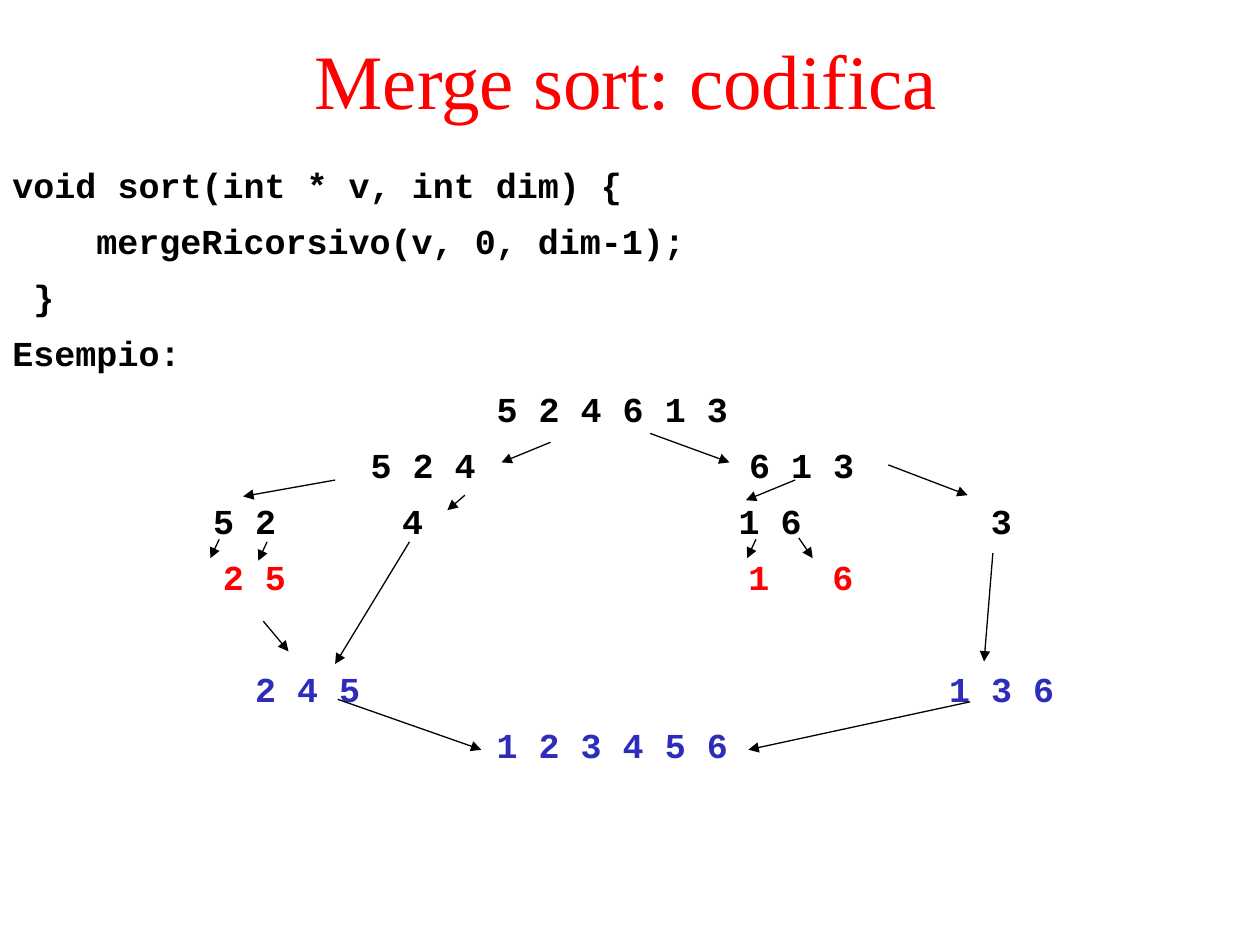
from lxml import etree
from pptx import Presentation
from pptx import util as u
from pptx.dml.color import RGBColor
from pptx.enum import shapes, text
from pptx.oxml.ns import qn

BLACK, RED, BLUE = "000000", "FF0000", "2D2DB9"
CENTRED = None

# Each line: colour, space before in points, (character column, words) pieces.
LINES = [
    (BLACK, 0, [(0, "void sort(int * v, int dim) {")]),
    (BLACK, 8, [(4, "mergeRicorsivo(v, 0, dim-1);")]),
    (BLACK, 8, [(1, "}")]),
    (BLACK, 8, [(0, "Esempio:")]),
    (BLACK, 8, [(CENTRED, "5 2 4 6 1 3")]),
    (BLACK, 8, [(17.06, "5 2 4"), (35.08, "6 1 3")]),
    (BLACK, 8, [(9.56, "5 2"), (18.56, "4"), (34.58, "1 6"), (46.6, "3")]),
    (RED, 8, [(10.02, "2 5"), (35.05, "1"), (39.05, "6")]),
    (BLUE, 40, [(11.56, "2 4 5"), (44.6, "1 3 6")]),
    (BLUE, 8, [(CENTRED, "1 2 3 4 5 6")]),
]

# Start column, start row, end column, end row.
SPLIT_ARROWS = [
    (43.7, 35.1, 39.8, 36.7), (51.6, 34.4, 57.9, 36.7),
    (70.5, 36.9, 76.8, 39.3), (63.1, 38.1, 59.2, 39.7),
    (26.6, 38.1, 19.3, 39.4), (36.9, 39.3, 35.5, 40.5),
    (17.4, 42.8, 16.7, 44.3), (21.2, 43, 20.5, 44.5),
    (60, 42.8, 59.3, 44.3), (63.4, 42.7, 64.5, 44.3),
]
MERGE_ARROWS = [
    (32.5, 43, 26.6, 52.7), (20.9, 49.3, 22.9, 51.7),
    (78.8, 43.9, 78.1, 52.5), (26.8, 55.5, 38.2, 59.5),
    (77, 55.7, 59.4, 59.5),
]


def colour(value):
    return RGBColor.from_string(value)


class Board:
    """Draws on one slide, laid out as 100 columns by 75 rows."""

    title_font, code_font = "Times New Roman", "Courier New"
    title_size, code_size = 44, 20
    character = 0.6 * code_size  # width in points

    def __init__(self, deck):
        self.page = deck.slides.add_slide(deck.slide_layouts[6])
        self.column = deck.slide_width / 100
        self.row = deck.slide_height / 75

    def place(self, column, row):
        return round(column * self.column), round(row * self.row)

    def frame(self, left, top, width, height):
        box = self.page.shapes.add_textbox(*self.place(left, top),
                                           *self.place(width, height))
        box.text_frame.word_wrap = True
        return box.text_frame

    def span(self, para, words, font, size, shade, bold=False):
        span = para.add_run()
        span.text = words
        span.font.name, span.font.size = font, u.Pt(size)
        span.font.bold = bold
        span.font.color.rgb = colour(shade)

    def title(self, words, *area):
        frame = self.frame(*area)
        frame.vertical_anchor = text.MSO_ANCHOR.MIDDLE
        para = frame.paragraphs[0]
        para.alignment = text.PP_ALIGN.CENTER
        self.span(para, words, self.title_font, self.title_size, RED)

    def tab_stops(self, para, columns):
        stops = etree.SubElement(para._p.get_or_add_pPr(), qn("a:tabLst"))
        for column in columns:
            place = u.Pt(column * self.character)
            etree.SubElement(stops, qn("a:tab"), pos=str(int(place)), algn="l")

    def code(self, lines, *area):
        frame = self.frame(*area)
        for number, (shade, gap, pieces) in enumerate(lines):
            para = frame.add_paragraph() if number else frame.paragraphs[0]
            para.space_before = u.Pt(gap)
            columns = [column for column, _ in pieces if column]
            if columns:
                self.tab_stops(para, columns)
            if pieces[0][0] is CENTRED:
                para.alignment = text.PP_ALIGN.CENTER
            for column, words in pieces:
                self.span(para, "\t" + words if column else words,
                          self.code_font, self.code_size, shade, bold=True)

    def arrow(self, left, top, right, bottom):
        line = self.page.shapes.add_connector(
            shapes.MSO_CONNECTOR.STRAIGHT,
            *self.place(left, top), *self.place(right, bottom))
        line.line.color.rgb = colour(BLACK)
        line.line.width = u.Pt(0.75)
        etree.SubElement(line.line._get_or_add_ln(), qn("a:tailEnd"),
                         type="triangle")
        etree.SubElement(line._element.spPr, qn("a:effectLst"))


def main():
    deck = Presentation()
    deck.slide_width, deck.slide_height = u.Inches(10), u.Inches(7.5)
    board = Board(deck)
    board.title("Merge sort: codifica", 7.2, 0, 85, 12.5)
    board.code(LINES, 0, 12.5, 97.2, 57.5)
    for ends in SPLIT_ARROWS + MERGE_ARROWS:
        board.arrow(*ends)
    deck.save("out.pptx")


if __name__ == "__main__":
    main()
